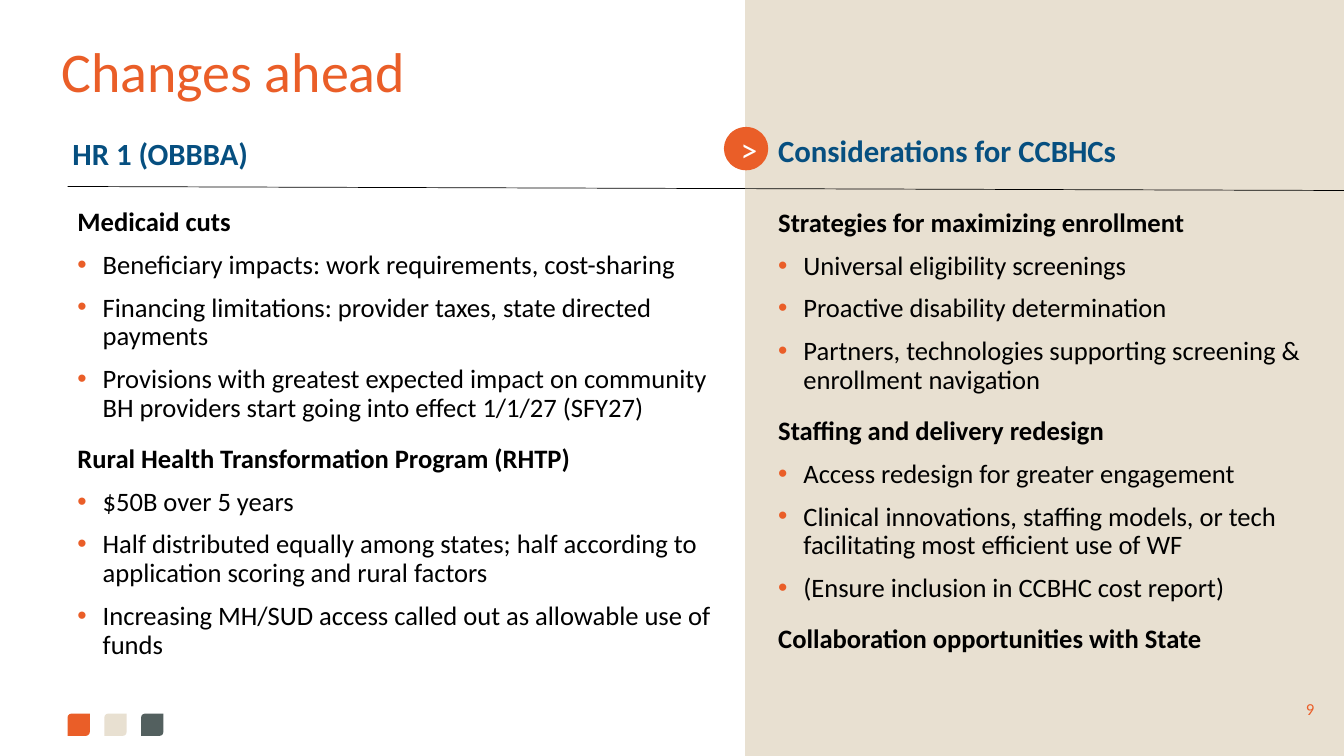
from dataclasses import dataclass

from lxml.etree import SubElement
from pptx import Presentation
from pptx.dml.color import RGBColor as Rgb
from pptx.enum.shapes import MSO_CONNECTOR as Conn, MSO_SHAPE as Kind
from pptx.enum.text import MSO_ANCHOR as Anchor, PP_ALIGN as Align
from pptx.oxml.ns import qn
from pptx.util import Inches, Pt


@dataclass(frozen=True)
class Theme:
    """Colours, font and type sizes of the slide."""
    orange: str = "EA5E28"
    sand: str = "E8E0D1"
    slate: str = "53605F"
    blue: str = "064F80"
    black: str = "000000"
    white: str = "FFFFFF"
    font: str = "Calibri"
    title: int = 40
    mark: int = 24
    head: int = 22
    body: int = 19
    page: int = 12


T = Theme()

CUTS = [
    ("Medicaid cuts", [
        "Beneficiary impacts: work requirements, cost-sharing",
        "Financing limitations: provider taxes, state directed payments",
        "Provisions with greatest expected impact on community BH providers "
        "start going into effect 1/1/27 (SFY27)"]),
    ("Rural Health Transformation Program (RHTP)", [
        "$50B over 5 years",
        "Half distributed equally among states; half according to "
        "application scoring and rural factors",
        "Increasing MH/SUD access called out as allowable use of funds"]),
]
PLANS = [
    ("Strategies for maximizing enrollment", [
        "Universal eligibility screenings",
        "Proactive disability determination",
        "Partners, technologies supporting screening & enrollment navigation"]),
    ("Staffing and delivery redesign", [
        "Access redesign for greater engagement",
        "Clinical innovations, staffing models, or tech facilitating most "
        "efficient use of WF",
        "(Ensure inclusion in CCBHC cost report)"]),
    ("Collaboration opportunities with State", []),
]


def style(para, size, color, bold=False):
    """Format every run of a paragraph."""
    for run in para.runs:
        font = run.font
        font.name, font.size, font.bold = T.font, Pt(size), bold
        font.color.rgb = Rgb.from_string(color)


def add_bullet(para):
    """Give a paragraph an orange bullet with a hanging indent."""
    props = para._p.get_or_add_pPr()
    props.set("marL", str(Inches(0.25)))
    props.set("indent", str(Inches(-0.25)))
    tint = SubElement(props, qn("a:buClr"))
    SubElement(tint, qn("a:srgbClr"), val=T.orange)
    SubElement(props, qn("a:buFont"), typeface="Arial")
    SubElement(props, qn("a:buChar"), char="•")


def add_block(slide, kind, box, color):
    """Draw a plain filled shape in the box."""
    shape = slide.shapes.add_shape(kind, *map(Inches, box))
    shape.shadow.inherit = False
    shape.fill.solid()
    shape.fill.fore_color.rgb = Rgb.from_string(color)
    shape.line.fill.background()
    return shape


def add_label(slide, box, text, size, color, bold=False, anchor=Anchor.TOP,
              align=Align.LEFT):
    """Write one line of text in the box."""
    frame = slide.shapes.add_textbox(*map(Inches, box)).text_frame
    frame.word_wrap = True
    frame.vertical_anchor = anchor
    frame.text = text
    para = frame.paragraphs[0]
    para.alignment = align
    style(para, size, color, bold)
    return para


def add_list(slide, box, groups):
    """Write bold group names, each followed by its bullets."""
    frame = slide.shapes.add_textbox(*map(Inches, box)).text_frame
    frame.word_wrap = True
    rows = []
    for name, points in groups:
        rows.append((name, True))
        rows += [(point, False) for point in points]
    for i, (text, top) in enumerate(rows):
        para = frame.add_paragraph() if i else frame.paragraphs[0]
        para.text = text
        para.line_spacing = 0.9
        if i:
            para.space_before = Pt(16 if top else 10)
        if not top:
            add_bullet(para)
        style(para, T.body, T.black, top)


def add_squares(slide, box):
    """Draw the row of three small squares from the box of the first."""
    left, top, wide, high = box
    for i, color in enumerate((T.orange, T.sand, T.slate)):
        spot = (left + i * 0.365, top, wide, high)
        add_block(slide, Kind.ROUND_2_DIAG_RECTANGLE, spot, color)


def add_panel(slide, box):
    """Fill the right side with sand."""
    panel = add_block(slide, Kind.RECTANGLE, box, T.sand)
    panel.line.color.rgb = Rgb.from_string(T.sand)
    panel.line.width = Pt(1)


def add_mark(slide, box):
    """Draw the round arrow mark between the columns."""
    mark = add_block(slide, Kind.OVAL, box, T.orange)
    frame = mark.text_frame
    frame.margin_left = Inches(0.06)
    frame.margin_right = frame.margin_top = frame.margin_bottom = 0
    frame.word_wrap = False
    frame.vertical_anchor = Anchor.MIDDLE
    frame.text = ">"
    frame.paragraphs[0].alignment = Align.CENTER
    style(frame.paragraphs[0], T.mark, T.white)


def add_rule(slide, box):
    """Draw the thin line across the box, corner to corner."""
    left, top, wide, high = box
    ends = map(Inches, (left, top, left + wide, top + high))
    rule = slide.shapes.add_connector(Conn.STRAIGHT, *ends)
    rule.line.color.rgb = Rgb.from_string(T.black)
    rule.line.width = Pt(0.5)
    SubElement(rule._element.spPr, qn("a:effectLst"))


def main():
    """Build the slide and save it."""
    deck = Presentation()
    deck.slide_width, deck.slide_height = Inches(13.33), Inches(7.5)
    slide = deck.slides.add_slide(deck.slide_layouts[6])
    add_squares(slide, (0.67, 7.08, 0.22, 0.22))
    add_panel(slide, (7.4, 0, 5.93, 7.5))
    title = add_label(slide, (0.51, 0.21, 12.15, 1.05), "Changes ahead",
                      T.title, T.orange, anchor=Anchor.MIDDLE)
    title.line_spacing = 0.9
    add_label(slide, (12.66, 6.83, 0.67, 0.4), "9", T.page, T.orange,
              anchor=Anchor.MIDDLE, align=Align.CENTER)
    add_list(slide, (0.67, 2.02, 6.59, 4.91), CUTS)
    add_label(slide, (0.62, 1.29, 4.6, 0.47), "HR 1 (OBBBA)",
              T.head, T.blue, True)
    add_label(slide, (7.62, 1.26, 4.6, 0.47), "Considerations for CCBHCs",
              T.head, T.blue, True)
    add_mark(slide, (7.18, 1.26, 0.44, 0.43))
    add_list(slide, (7.62, 2.03, 5.71, 5.47), PLANS)
    add_rule(slide, (0.67, 1.85, 12.66, 0.04))
    deck.save("out.pptx")


if __name__ == "__main__":
    main()
